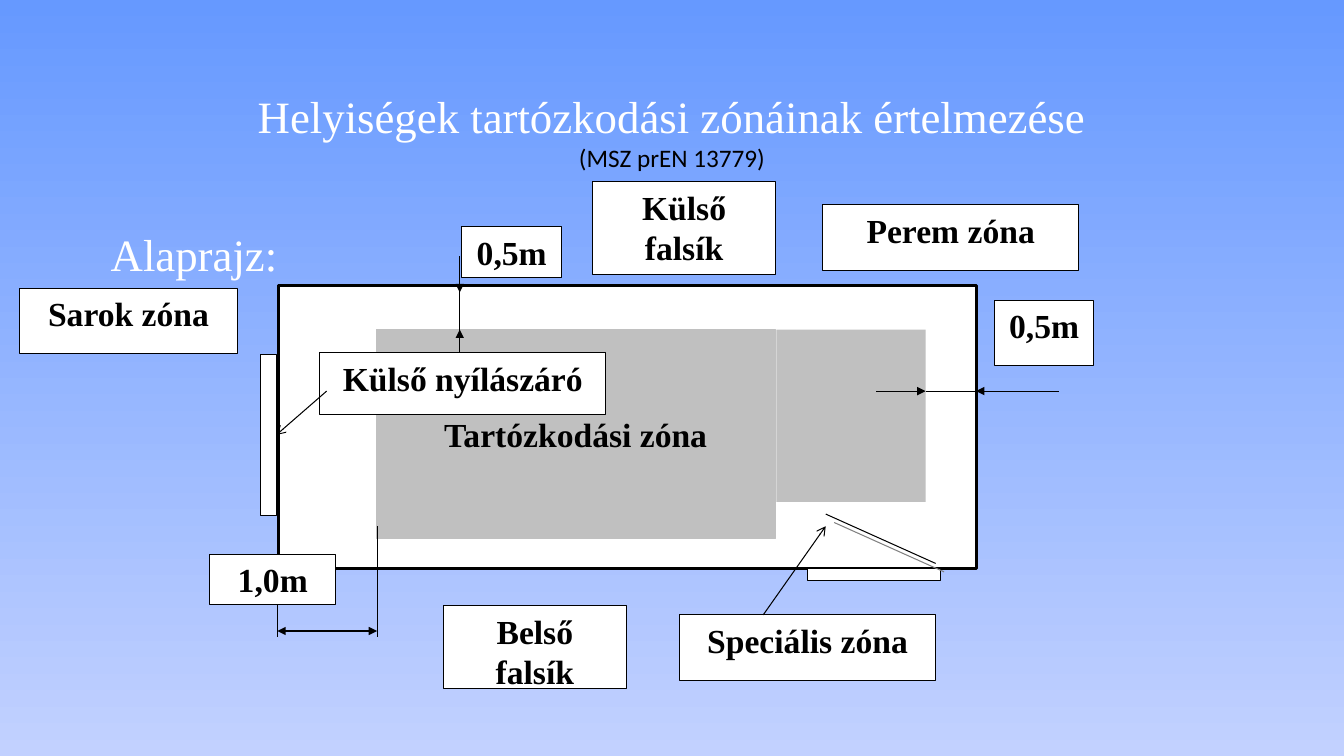
from lxml.etree import SubElement
from pptx import Presentation
from pptx.dml.color import RGBColor
from pptx.enum.shapes import MSO_CONNECTOR, MSO_SHAPE
from pptx.enum.text import MSO_ANCHOR, PP_ALIGN
from pptx.oxml.ns import qn
from pptx.util import Inches, Pt


def color(fmt, value):
    fmt.rgb = RGBColor.from_string(value)


def write(shape, text, style, tint, align, anchor):
    frame = shape.text_frame
    frame.word_wrap = True
    frame.vertical_anchor = anchor
    para = frame.paragraphs[0]
    para.text = text
    para.alignment = align
    for name, value in style.items():
        setattr(para.runs[0].font, name, value)
    color(para.runs[0].font.color, tint)


deck = Presentation()
deck.slide_width, deck.slide_height = Inches(13.33), Inches(7.5)
slide = deck.slides.add_slide(deck.slide_layouts[6])
back = slide.background.fill
back.gradient()
back.gradient_angle = 270
for stop, tint in zip(back.gradient_stops, ("6699FF", "C2D1FF")):
    color(stop.color, tint)

large = {"name": "Times New Roman", "size": Pt(32), "bold": False}
small = {"name": "Times New Roman", "size": Pt(24), "bold": True}

heads = [
    ("Helyiségek tartózkodási zónáinak értelmezése\v(MSZ prEN 13779)",
     (1, 0.67, 11.33, 1.25), PP_ALIGN.CENTER, MSO_ANCHOR.MIDDLE),
    ("Alaprajz:", (1, 2.2, 11.33, 0.7), PP_ALIGN.LEFT, MSO_ANCHOR.TOP),
]
for text, box, align, anchor in heads:
    head = slide.shapes.add_textbox(*map(Inches, box))
    write(head, text, large, "FFFFFF", align, anchor)

plan = [
    ("room", (2.76, 2.83, 6.93, 2.81), "FFFFFF", "000000", 2.25, ""),
    ("window", (2.58, 3.52, 0.16, 1.59), "FFFFFF", "000000", 0.75, ""),
    ("door", (8.01, 5.64, 1.32, 0.12), "FFFFFF", "000000", 0.75, ""),
    ("zone", (3.73, 3.27, 3.96, 2.07), "C0C0C0", "C0C0C0", 0.75, "Tartózkodási zóna"),
    ("strip", (7.7, 3.27, 1.48, 1.71), "C0C0C0", None, 0, ""),
]
labels = [
    ("1,0m", (2.08, 5.5, 1.25, 0.5)),
    ("0,5m", (4.58, 2.25, 0.99, 0.5)),
    ("0,5m", (9.86, 2.98, 0.99, 0.65)),
    ("Speciális zóna", (6.74, 6.1, 2.54, 0.65)),
    ("Külső nyílászáró", (3.17, 3.5, 2.84, 0.61)),
    ("Belső falsík", (4.4, 6.01, 1.81, 0.82)),
    ("Külső falsík", (5.88, 1.8, 1.81, 0.92)),
    ("Sarok zóna", (0.19, 2.86, 2.17, 0.65)),
    ("Perem zóna", (8.16, 2.03, 2.54, 0.65)),
]
sizes = [
    ((2.75, 5.59), (2.75, 6.32), None, None),
    ((3.74, 5.22), (3.74, 6.32), None, None),
    ((2.75, 6.26), (3.74, 6.26), "triangle", "triangle"),
    ((4.56, 2.54), (4.56, 3.52), None, None),
    ((10.5, 3.88), (9.68, 3.88), None, "triangle"),
    ((8.69, 3.88), (9.18, 3.88), None, "triangle"),
    ((9.18, 3.88), (9.68, 3.88), None, None),
    ((4.56, 2.54), (4.56, 2.9), None, "triangle"),
    ((4.56, 3.64), (4.56, 3.27), None, "triangle"),
]
leads = [
    ((7.57, 6.1), (8.19, 5.22), None, "arrow"),
    ((3.24, 3.88), (2.74, 4.31), None, "arrow"),
    ((9.28, 5.59), (8.19, 5.1), None, None),
]
boxes = [("box", *row) for row in plan]
notes = [("box", "label", box, "FFFFFF", "000000", 0.75, text) for text, box in labels]
lines = [("line", *row) for row in sizes]
ends = [("line", *row) for row in leads]

parts = {}
for kind, *row in boxes + lines + notes + ends:
    if kind == "box":
        name, box, fill, edge, width, text = row
        shape = slide.shapes.add_shape(MSO_SHAPE.RECTANGLE, *map(Inches, box))
        shape.shadow.inherit = False
        shape.fill.solid()
        color(shape.fill.fore_color, fill)
        if edge:
            color(shape.line.color, edge)
            shape.line.width = Pt(width)
        else:
            shape.line.fill.background()
        if text:
            anchor = MSO_ANCHOR.TOP if name == "label" else MSO_ANCHOR.MIDDLE
            write(shape, text, small, "000000", PP_ALIGN.CENTER, anchor)
        parts[name] = shape
    else:
        start, end, head, tail = row
        line = slide.shapes.add_connector(MSO_CONNECTOR.STRAIGHT, *map(Inches, start + end))
        color(line.line.color, "000000")
        line.line.width = Pt(0.75)
        stroke = line.line._get_or_add_ln()
        for tag, mark in (("a:headEnd", head), ("a:tailEnd", tail)):
            if mark:
                SubElement(stroke, qn(tag), type=mark)
        effect = SubElement(line._element.spPr, qn("a:effectLst"))
        if end == (2.74, 4.31):
            line.end_connect(parts["window"], 3)

shade = SubElement(effect, qn("a:outerShdw"), dist=str(Pt(8.5)), dir="2700000",
                   algn="ctr", rotWithShape="0")
SubElement(shade, qn("a:srgbClr"), val="808080")

deck.save("out.pptx")
